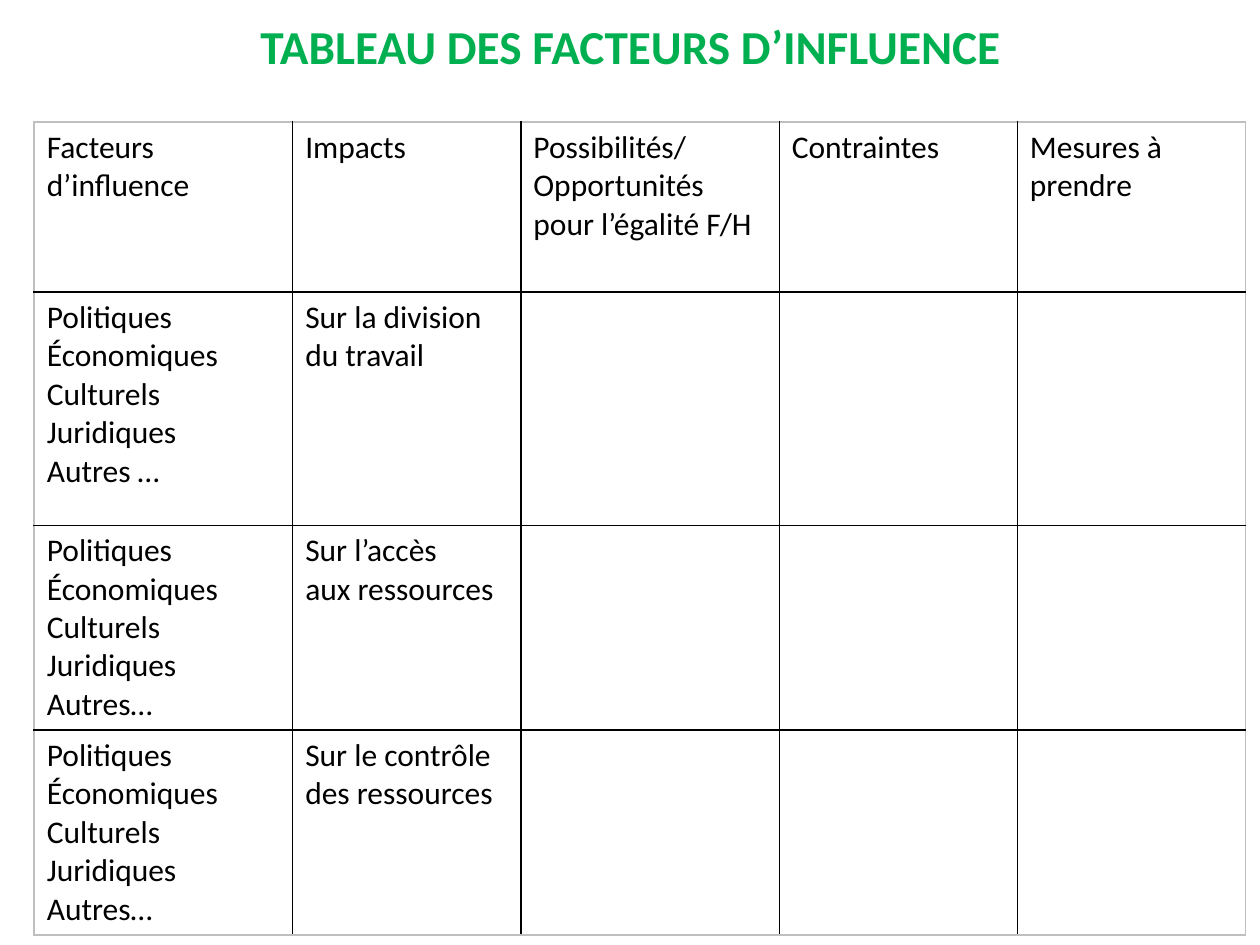
from lxml import etree
from pptx import Presentation
from pptx.dml.color import RGBColor
from pptx.enum import text
from pptx.oxml import ns
from pptx.util import Cm, Pt

GREEN = RGBColor(0x00, 0xB0, 0x50)
BLACK = RGBColor(0x00, 0x00, 0x00)
GREY = RGBColor(0xBF, 0xBF, 0xBF)
FONT = "Calibri"

COLUMN_WIDTHS = [5.21, 4.6, 5.21, 4.8, 4.6]
ROW_HEIGHTS = [3.43, 4.7, 4.04, 4.04]
FACTORS = "Politiques\nÉconomiques\nCulturels\nJuridiques\n"
ROWS = [
    ["Facteurs d’influence", "Impacts",
     "Possibilités/ Opportunités\npour l’égalité F/H",
     "Contraintes", "Mesures à prendre"],
    [FACTORS + "Autres …", "Sur la division\ndu travail", "", "", ""],
    [FACTORS + "Autres…", "Sur l’accès\naux ressources", "", "", ""],
    [FACTORS + "Autres…", "Sur le contrôle\ndes ressources", "", "", ""],
]


def format_runs(text_frame, size, color, bold=False):
    for paragraph in text_frame.paragraphs:
        for run in paragraph.runs:
            run.font.name = FONT
            run.font.size = Pt(size)
            run.font.bold = bold
            run.font.color.rgb = color


def add_border(cell, side, color):
    """Draw one side (L, R, T or B) of a cell."""
    properties = cell._tc.get_or_add_tcPr()
    line = etree.SubElement(properties, ns.qn(f"a:ln{side}"), w=str(Pt(1)))
    fill = etree.SubElement(line, ns.qn("a:solidFill"))
    etree.SubElement(fill, ns.qn("a:srgbClr"), val=str(color))


def place_title(slide, left, top, width, height):
    title = slide.shapes.title
    title.left, title.top, title.width, title.height = left, top, width, height
    text_frame = title.text_frame
    text_frame.text = "TABLEAU DES FACTEURS D’INFLUENCE"
    text_frame.auto_size = text.MSO_AUTO_SIZE.NONE
    text_frame.vertical_anchor = text.MSO_ANCHOR.MIDDLE
    text_frame.paragraphs[0].alignment = text.PP_ALIGN.CENTER
    format_runs(text_frame, 27, GREEN, bold=True)


def add_factor_table(slide, left, top):
    """Add the grid: black rules inside, a grey frame outside."""
    last_row, last_column = len(ROWS) - 1, len(COLUMN_WIDTHS) - 1
    table = slide.shapes.add_table(
        len(ROWS), len(COLUMN_WIDTHS), left, top,
        Cm(sum(COLUMN_WIDTHS)), Cm(sum(ROW_HEIGHTS))).table
    table.first_row = table.horz_banding = False
    for column, width in zip(table.columns, COLUMN_WIDTHS):
        column.width = Cm(width)
    for row, height in zip(table.rows, ROW_HEIGHTS):
        row.height = Cm(height)

    for i, row in enumerate(ROWS):
        for j, wording in enumerate(row):
            cell = table.cell(i, j)
            cell.text_frame.text = wording
            format_runs(cell.text_frame, 18, BLACK)
            outer_sides = {"L": j == 0, "R": j == last_column,
                           "T": i == 0, "B": i == last_row}
            for side, is_outer in outer_sides.items():
                add_border(cell, side, GREY if is_outer else BLACK)
            cell.fill.background()


def main():
    presentation = Presentation()
    presentation.slide_width, presentation.slide_height = Cm(25.4), Cm(19.05)
    title_only = presentation.slide_layouts[5]
    slide = presentation.slides.add_slide(title_only)
    place_title(slide, Cm(1.09), Cm(0.13), Cm(23.24), Cm(1.57))
    add_factor_table(slide, Cm(0.69), Cm(2.46))
    presentation.save("out.pptx")


if __name__ == "__main__":
    main()
